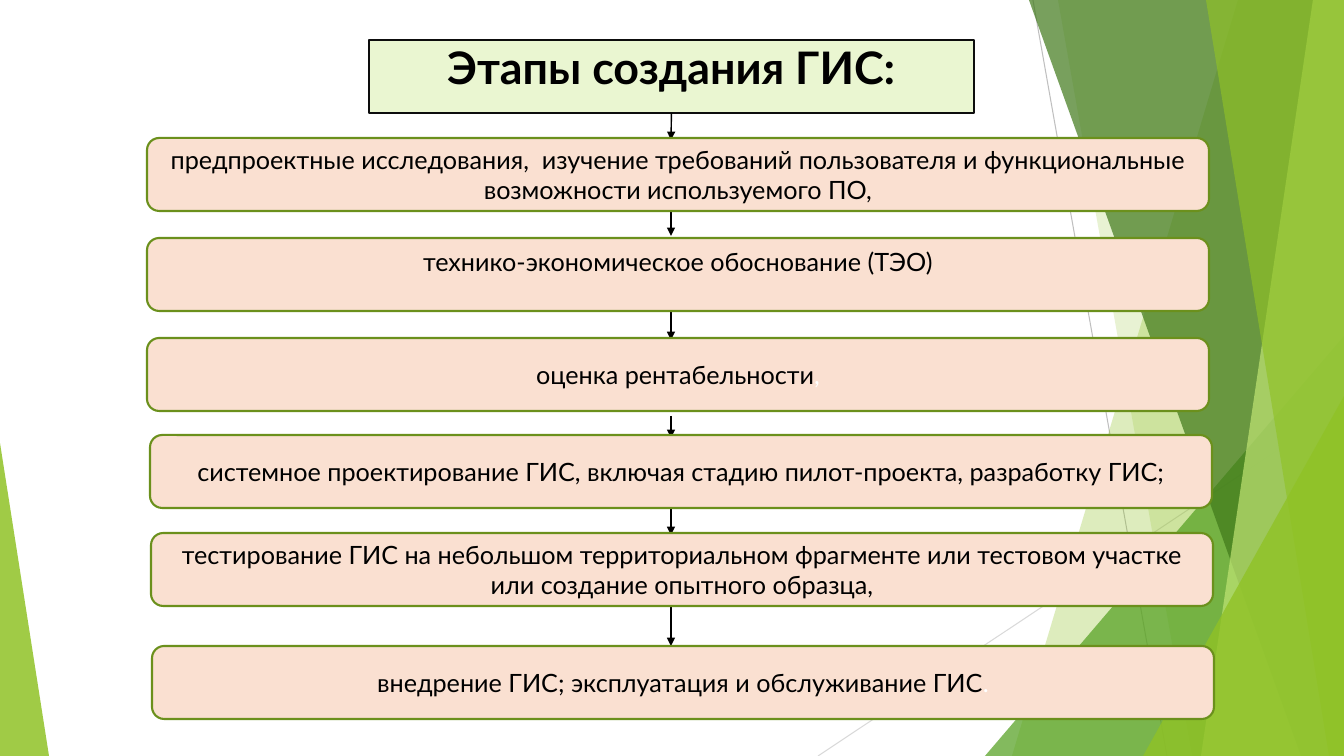
from lxml import etree
from pptx import Presentation
from pptx.dml.color import RGBColor
from pptx.enum.shapes import MSO_CONNECTOR, MSO_SHAPE
from pptx.enum.text import MSO_ANCHOR, MSO_AUTO_SIZE, PP_ALIGN
from pptx.oxml import parse_xml
from pptx.oxml.ns import nsdecls, qn
from pptx.util import Pt

EMU_PER_PX = 914400 / 100.8
SLIDE_W, SLIDE_H = 1344, 756
FONT = "Lato"
COLORS = {
    "black": "000000", "white": "FFFFFF", "title_fill": "EAF6D1", "title_line": "0D0D0D",
    "stage_fill": "FAE0D1", "stage_line": "6B901C", "gray": "BFBFBF", "pale_gray": "D9D9D9",
    "green": "90C226", "grass": "54A021", "forest": "3F7819", "lime": "C0E474",
}

TITLE = "Этапы создания ГИС:"
TITLE_BOX = (369, 40, 605, 73)
STAGE_W, STAGE_H = 1062, 73
# left, top, text, white closing mark, anchor
STAGES = [
    (147, 138, "предпроектные исследования,  изучение требований пользователя и "
               "функциональные возможности используемого ПО,", "", MSO_ANCHOR.MIDDLE),
    (147, 238, "технико-экономическое обоснование (ТЭО)", "", MSO_ANCHOR.TOP),
    (147, 338, "оценка рентабельности", ",", MSO_ANCHOR.MIDDLE),
    (150, 435, "системное проектирование ГИС, включая стадию пилот-проекта, разработку ГИС;",
     "", MSO_ANCHOR.MIDDLE),
    (151, 533, "тестирование ГИС на небольшом территориальном фрагменте или тестовом участке "
               "или создание опытного образца,", "", MSO_ANCHOR.MIDDLE),
    (152, 646, "внедрение ГИС; эксплуатация и обслуживание ГИС", ".", MSO_ANCHOR.MIDDLE),
]
ARROW_X = 671
ARROW_SPANS = [(113, 140), (210, 236), (309, 340), (416, 438), (487, 535), (604, 646)]

THIN_LINES = [((1033, 0), (1167, 756), "gray"), ((1344, 406), (818, 756), "pale_gray")]
# Bands reach the right edge: x at the top, x at the bottom, colour, opacity
BACK_BANDS = [(1238, 1012, "green", 30), (1058, 1192, "green", 20)]
FRONT_BANDS = [(1029, 1301, "forest", 70), (1313, 1201, "lime", 70), (1206, 1329, "green", 65)]
# Box, apex position, colour, opacity
BACK_TRIANGLE = ((985, 336, 359, 420), 1, "grass", 72)
FRONT_TRIANGLES = [((1143, 396, 201, 360), 1, "green", 80), ((0, 443, 49, 313), 0, "green", 85)]


def px(value):
    return round(value * EMU_PER_PX)


def rgb(name):
    return RGBColor.from_string(COLORS[name])


def paint(shape, fill, line=None, opacity=100):
    shape.fill.solid()
    shape.fill.fore_color.rgb = rgb(fill)
    if opacity < 100:
        color = shape.fill._xPr.find(qn("a:solidFill"))[0]
        etree.SubElement(color, qn("a:alpha")).set("val", str(opacity * 1000))
    if line:
        shape.line.color.rgb = rgb(line)
        shape.line.width = Pt(1.5)
    else:
        shape.line.fill.background()


def write(shape, text, size=18, bold=False, closing="", anchor=MSO_ANCHOR.MIDDLE):
    frame = shape.text_frame
    frame.word_wrap = True
    frame.auto_size = MSO_AUTO_SIZE.NONE
    frame.vertical_anchor = anchor
    paragraph = frame.paragraphs[0]
    paragraph.alignment = PP_ALIGN.CENTER
    paragraph.line_spacing = 1.0
    for part, color in ((text, "black"), (closing, "white")):
        if part:
            run = paragraph.add_run()
            run.text = part
            run.font.name = FONT
            run.font.size = Pt(size)
            run.font.bold = bold
            run.font.color.rgb = rgb(color)


def add_line(shapes, start, end, color, width, arrow=False):
    line = shapes.add_connector(MSO_CONNECTOR.STRAIGHT, *map(px, start + end))
    line.line.color.rgb = rgb(color)
    line.line.width = Pt(width)
    if arrow:
        etree.SubElement(line.line._get_or_add_ln(), qn("a:tailEnd")).set("type", "triangle")
    etree.SubElement(line._element.spPr, qn("a:effectLst"))
    return line


def add_band(shapes, top_x, bottom_x, color, opacity):
    builder = shapes.build_freeform(top_x, 0, scale=EMU_PER_PX)
    builder.add_line_segments([(SLIDE_W, 0), (SLIDE_W, SLIDE_H), (bottom_x, SLIDE_H)])
    band = builder.convert_to_shape()
    band.shadow.inherit = False
    paint(band, color, opacity=opacity)


def add_preset(shapes, preset, box):
    shape = shapes.add_shape(preset, *map(px, box))
    shape.shadow.inherit = False
    return shape


def add_triangle(shapes, box, apex, color, opacity):
    triangle = add_preset(shapes, MSO_SHAPE.ISOSCELES_TRIANGLE, box)
    triangle.adjustments[0] = apex
    paint(triangle, color, opacity=opacity)


def add_backdrop(shapes):
    for start, end, color in THIN_LINES:
        add_line(shapes, start, end, color, 0.75)
    for band in BACK_BANDS:
        add_band(shapes, *band)
    add_triangle(shapes, *BACK_TRIANGLE)
    for band in FRONT_BANDS:
        add_band(shapes, *band)
    for triangle in FRONT_TRIANGLES:
        add_triangle(shapes, *triangle)


def format_title(title):
    title.left, title.top, title.width, title.height = map(px, TITLE_BOX)
    title._element.spPr.insert(1, parse_xml(
        f'<a:prstGeom {nsdecls("a")} prst="roundRect"><a:avLst/></a:prstGeom>'))
    paint(title, "title_fill", "title_line")
    write(title, TITLE, size=32, bold=True, anchor=MSO_ANCHOR.TOP)
    title.text_frame.margin_top = 0


def main():
    presentation = Presentation()
    presentation.slide_width, presentation.slide_height = px(SLIDE_W), px(SLIDE_H)
    slide = presentation.slides.add_slide(presentation.slide_layouts[5])
    shapes = slide.shapes
    add_backdrop(shapes)
    format_title(shapes.title)

    arrows = [add_line(shapes, (ARROW_X, top), (ARROW_X, bottom), "black", 1, arrow=True)
              for top, bottom in ARROW_SPANS]
    arrows[0].begin_connect(shapes.title, 2)

    for left, top, text, closing, anchor in STAGES:
        stage = add_preset(shapes, MSO_SHAPE.ROUNDED_RECTANGLE, (left, top, STAGE_W, STAGE_H))
        paint(stage, "stage_fill", "stage_line")
        write(stage, text, closing=closing, anchor=anchor)
    presentation.save("out.pptx")


if __name__ == "__main__":
    main()
